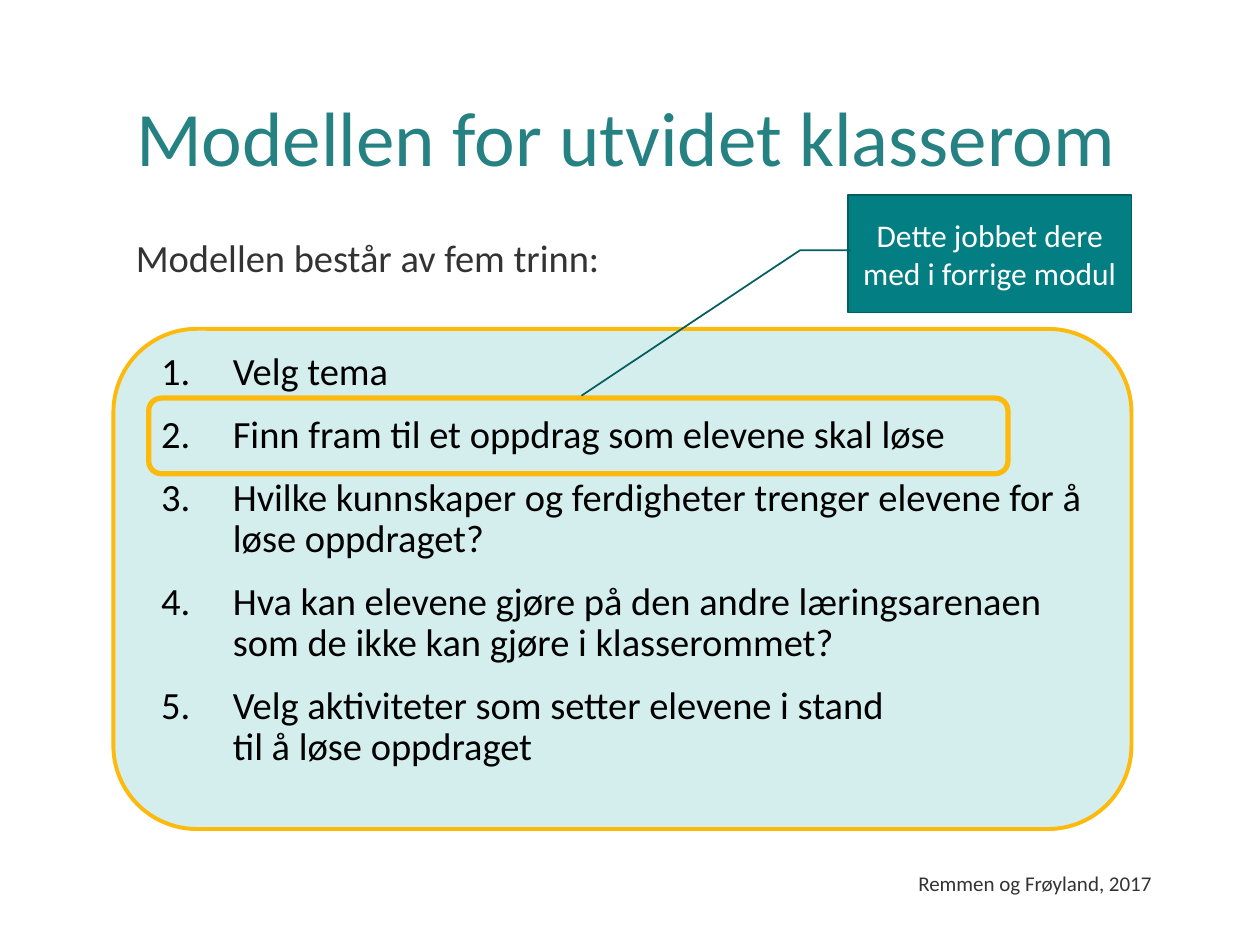
from dataclasses import dataclass

import pptx
import pptx.dml.color
import pptx.enum.shapes
import pptx.enum.text
import pptx.oxml
import pptx.oxml.ns
import pptx.util

Pt = pptx.util.Pt
Kind = pptx.enum.shapes.MSO_SHAPE
Align = pptx.enum.text.PP_ALIGN
Anchor = pptx.enum.text.MSO_ANCHOR
WIDTH, HEIGHT = pptx.util.Inches(10), pptx.util.Inches(7.5)
FONT = "Calibri"
COLORS = {
    "title": "268183", "text": "333333", "list": "000000", "panel": "D4EEEE",
    "gold": "FDB90C", "teal": "037F83", "edge": "025E61", "white": "FFFFFF",
}
STEPS = [
    "Velg tema",
    "Finn fram til et oppdrag som elevene skal løse",
    "Hvilke kunnskaper og ferdigheter trenger elevene for å løse oppdraget?",
    "Hva kan elevene gjøre på den andre læringsarenaen som de ikke kan gjøre i klasserommet?",
    "Velg aktiviteter som setter elevene i stand\ntil å løse oppdraget",
]


@dataclass
class Box:
    """A place given in percent of the slide's width and height."""
    left: float
    top: float
    width: float
    height: float

    def frame(self) -> tuple[int, int, int, int]:
        return (int(WIDTH * self.left / 100), int(HEIGHT * self.top / 100),
                int(WIDTH * self.width / 100), int(HEIGHT * self.height / 100))


@dataclass
class Style:
    size: float
    color: str
    align: Align = Align.LEFT
    spacing: float = 1.0


def rgb(name: str) -> pptx.dml.color.RGBColor:
    return pptx.dml.color.RGBColor.from_string(COLORS[name])


def number(para) -> None:
    """Give the paragraph an automatic number and a hanging indent."""
    props = para._p.get_or_add_pPr()
    indent = pptx.util.Inches(0.57)
    props.set("marL", str(indent))
    props.set("indent", str(-indent))
    for tag, key, value in (("buFont", "typeface", "+mj-lt"),
                            ("buAutoNum", "type", "arabicPeriod")):
        item = pptx.oxml.parse_xml(f'<a:{tag} {pptx.oxml.ns.nsdecls("a")} {key}="{value}"/>')
        props.append(item)


def write(frame, lines: list[str], style: Style, numbered: bool = False) -> None:
    frame.word_wrap = True
    for index, line in enumerate(lines):
        para = frame.add_paragraph() if index else frame.paragraphs[0]
        if numbered:
            number(para)
        para.alignment = style.align
        para.line_spacing = style.spacing
        para.space_before = Pt(12 if index else 0)
        for part, words in enumerate(line.split("\n")):
            if part:
                para.add_line_break()
            run = para.add_run()
            run.text = words
            run.font.name = FONT
            run.font.size = Pt(style.size)
            run.font.color.rgb = rgb(style.color)


def label(slide, box: Box, lines: list[str], style: Style, numbered: bool = False) -> None:
    write(slide.shapes.add_textbox(*box.frame()).text_frame, lines, style, numbered)


def shape(slide, kind: Kind, box: Box, fill: str | None, line: str, weight: float):
    item = slide.shapes.add_shape(kind, *box.frame())
    item.shadow.inherit = False
    if fill:
        item.fill.solid()
        item.fill.fore_color.rgb = rgb(fill)
    else:
        item.fill.background()
    item.line.color.rgb = rgb(line)
    item.line.width = Pt(weight)
    return item


def head(slide, box: Box, text: str) -> None:
    title = slide.shapes.title
    title.left, title.top, title.width, title.height = box.frame()
    frame = title.text_frame
    frame.auto_size = pptx.enum.text.MSO_AUTO_SIZE.NONE
    frame.vertical_anchor = Anchor.MIDDLE
    write(frame, [text], Style(44, "title", spacing=0.9))


def callout(slide, box: Box, text: str) -> None:
    note = shape(slide, Kind.LINE_CALLOUT_2, box, "teal", "edge", 1)
    for index, value in enumerate((0.47, 0.01, 0.47, -0.17, 1.71, -0.94)):
        note.adjustments[index] = value
    note.text_frame.vertical_anchor = Anchor.MIDDLE
    write(note.text_frame, [text], Style(18, "white", Align.CENTER))


def main() -> None:
    deck = pptx.Presentation()
    deck.slide_width, deck.slide_height = WIDTH, HEIGHT
    slide = deck.slides.add_slide(deck.slide_layouts[5])
    head(slide, Box(9.8, 5.33, 83.3, 19.33), "Modellen for utvidet klasserom")
    label(slide, Box(9.8, 24.67, 83.3, 65.47), ["Modellen består av fem trinn:"],
          Style(22, "text", spacing=0.9))
    shape(slide, Kind.ROUNDED_RECTANGLE, Box(9, 34.8, 80.8, 52.93), "panel", "gold", 2.25)
    label(slide, Box(11.8, 36.67, 75.9, 49.07), STEPS,
          Style(22, "list", spacing=0.9), numbered=True)
    shape(slide, Kind.ROUNDED_RECTANGLE, Box(11.8, 42.13, 68.2, 8), None, "gold", 3)
    callout(slide, Box(67.3, 20.67, 22.5, 12.4), "Dette jobbet dere med i forrige modul")
    label(slide, Box(71.9, 91.47, 21, 4), ["Remmen og Frøyland, 2017"], Style(12, "text"))
    deck.save("out.pptx")


if __name__ == "__main__":
    main()
